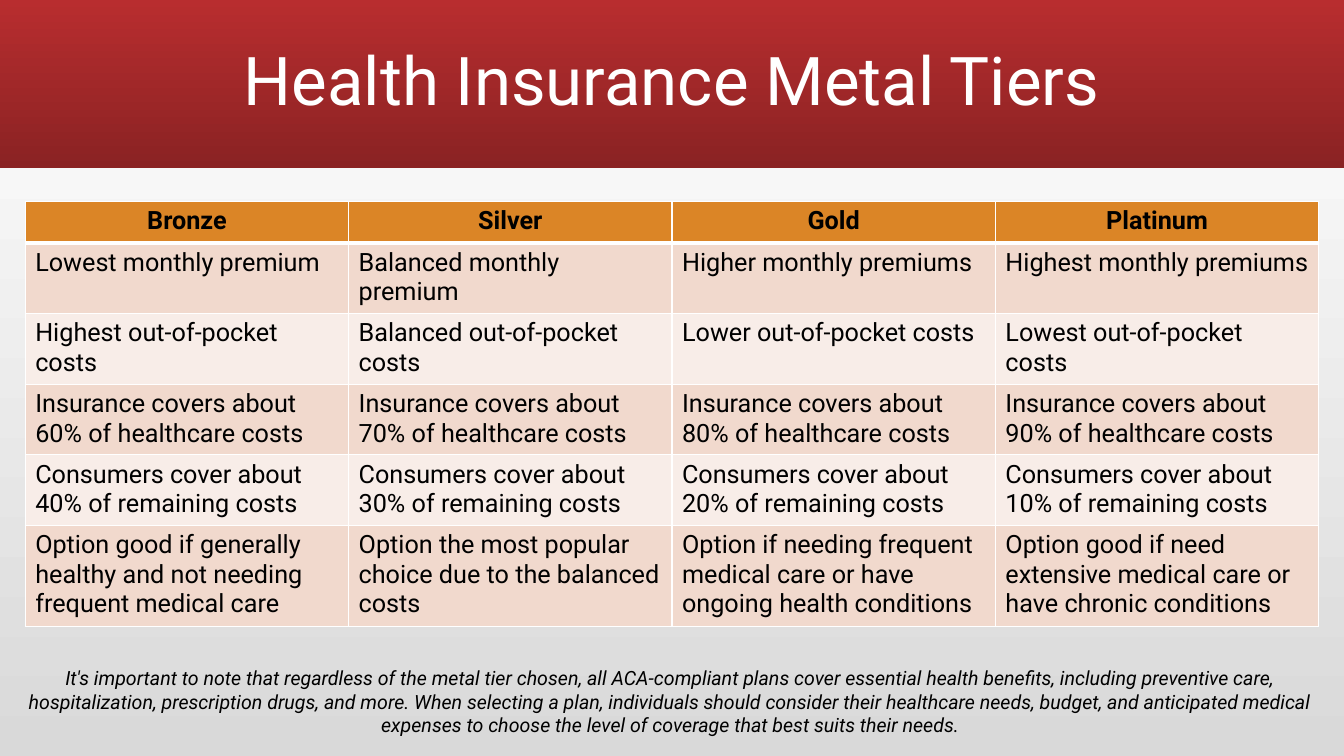
from dataclasses import dataclass
from lxml.etree import SubElement as Sub
from pptx import Presentation
from pptx.dml.color import RGBColor as RGB
from pptx.enum.shapes import MSO_SHAPE as Shape
from pptx.enum.text import MSO_ANCHOR as Anchor, MSO_AUTO_SIZE as Auto, PP_ALIGN as Align
from pptx.oxml.ns import qn
from pptx.util import Inches, Pt


@dataclass(frozen=True)
class Theme:
    font: str = "Roboto"
    ink: str = "000000"
    white: str = "FFFFFF"
    back: tuple = ("D9D9D9", "FFFFFF")
    red: tuple = ("B82D2F", "8A2223")
    head: str = "DB8526"
    bands: tuple = ("F8EDE8", "F1D9CD")
    title: int = 48
    body: int = 18
    note: int = 14
    thin: int = 1
    thick: int = 3


TIERS = ["Bronze", "Silver", "Gold", "Platinum"]
ROWS = [
    TIERS,
    ["Lowest monthly premium", "Balanced monthly premium",
     "Higher monthly premiums", "Highest monthly premiums"],
    [f"{level} out-of-pocket costs" for level in ("Highest", "Balanced", "Lower", "Lowest")],
    [f"Insurance covers about {share}% of healthcare costs" for share in (60, 70, 80, 90)],
    [f"Consumers cover about {share}% of remaining costs" for share in (40, 30, 20, 10)],
    ["Option good if generally healthy and not needing frequent medical care",
     "Option the most popular choice due to the balanced costs",
     "Option if needing frequent medical care or have ongoing health conditions",
     "Option good if need extensive medical care or have chronic conditions"],
]
HEIGHTS = [0.41, 0.7, 0.7, 0.7, 0.7, 1.0]
NOTE = (
    "It's important to note that regardless of the metal tier chosen, all ACA-compliant plans "
    "cover essential health benefits, including preventive care, hospitalization, prescription "
    "drugs, and more. When selecting a plan, individuals should consider their healthcare needs, "
    "budget, and anticipated medical expenses to choose the level of coverage that best suits "
    "their needs."
)


class Deck:
    def __init__(self, theme, wide, high):
        self.theme = theme
        self.prs = Presentation()
        self.prs.slide_width = self.wide = Inches(wide)
        self.prs.slide_height = self.high = Inches(high)
        self.slide = self.prs.slides.add_slide(self.prs.slide_layouts[5])

    def box(self, left, top, wide, high):
        return (round(left * self.wide), round(top * self.high),
                round(wide * self.wide), round(high * self.high))

    def blend(self, fill, tones, angle):
        fill.gradient()
        fill.gradient_angle = angle
        for stop, tone in zip(fill.gradient_stops, tones):
            stop.color.rgb = RGB.from_string(tone)

    def label(self, frame, text, size, color, align=Align.CENTER, bold=False, italic=False):
        frame.text = text
        frame.word_wrap = True
        para = frame.paragraphs[0]
        para.alignment = align
        for run in para.runs:
            font = run.font
            font.name, font.size = self.theme.font, Pt(size)
            font.bold, font.italic = bold, italic
            font.color.rgb = RGB.from_string(color)
        return para

    def back(self):
        self.blend(self.slide.background.fill, self.theme.back, 90)

    def banner(self, *area):
        band = self.slide.shapes.add_shape(Shape.RECTANGLE, *self.box(*area))
        band.shadow.inherit = False
        band.line.fill.background()
        self.blend(band.fill, self.theme.red, 270)
        self.slide.shapes._spTree.insert(2, band._element)

    def title(self, text, *area):
        head = self.slide.shapes.title
        head.left, head.top, head.width, head.height = self.box(*area)
        head.text_frame.vertical_anchor = Anchor.MIDDLE
        para = self.label(head.text_frame, text, self.theme.title, self.theme.white)
        para.line_spacing = 0.9

    def note(self, text, *area):
        frame = self.slide.shapes.add_textbox(*self.box(*area)).text_frame
        self.label(frame, text, self.theme.note, self.theme.ink, italic=True)
        frame.auto_size = Auto.SHAPE_TO_FIT_TEXT

    def edge(self, cell, top, base):
        props = cell._tc.get_or_add_tcPr()
        thin = self.theme.thin
        sides = {"lnL": thin, "lnR": thin, "lnT": top, "lnB": base}
        for spot, (side, size) in enumerate(sides.items()):
            line = Sub(props, qn(f"a:{side}"), w=str(Pt(size)))
            Sub(Sub(line, qn("a:solidFill")), qn("a:srgbClr"), val=self.theme.white)
            props.insert(spot, line)

    def table(self, rows, heights, *area):
        theme = self.theme
        grid = self.slide.shapes.add_table(len(rows), len(rows[0]), *self.box(*area)).table
        for r, texts in enumerate(rows):
            grid.rows[r].height = Inches(heights[r])
            head = r == 0
            tone = theme.head if head else theme.bands[r % 2]
            for c, text in enumerate(texts):
                cell = grid.cell(r, c)
                cell.fill.solid()
                cell.fill.fore_color.rgb = RGB.from_string(tone)
                self.label(cell.text_frame, text, theme.body, theme.ink,
                           Align.CENTER if head else Align.LEFT, bold=head)
                self.edge(cell, theme.thick if r == 1 else theme.thin,
                          theme.thick if head else theme.thin)


def main():
    wide, high = 13.33, 7.5
    deck = Deck(Theme(), wide, high)
    deck.back()
    deck.banner(0, 0, 1, 1.67 / high)
    deck.title("Health Insurance Metal Tiers", 0, 0.11 / high, 1, 1.45 / high)
    deck.note(NOTE, 0, 6.56 / high, 13.3 / wide, 0.81 / high)
    deck.table(ROWS, HEIGHTS, 0.25 / wide, 2 / high, 12.83 / wide, sum(HEIGHTS) / high)
    deck.prs.save("out.pptx")


if __name__ == "__main__":
    main()
